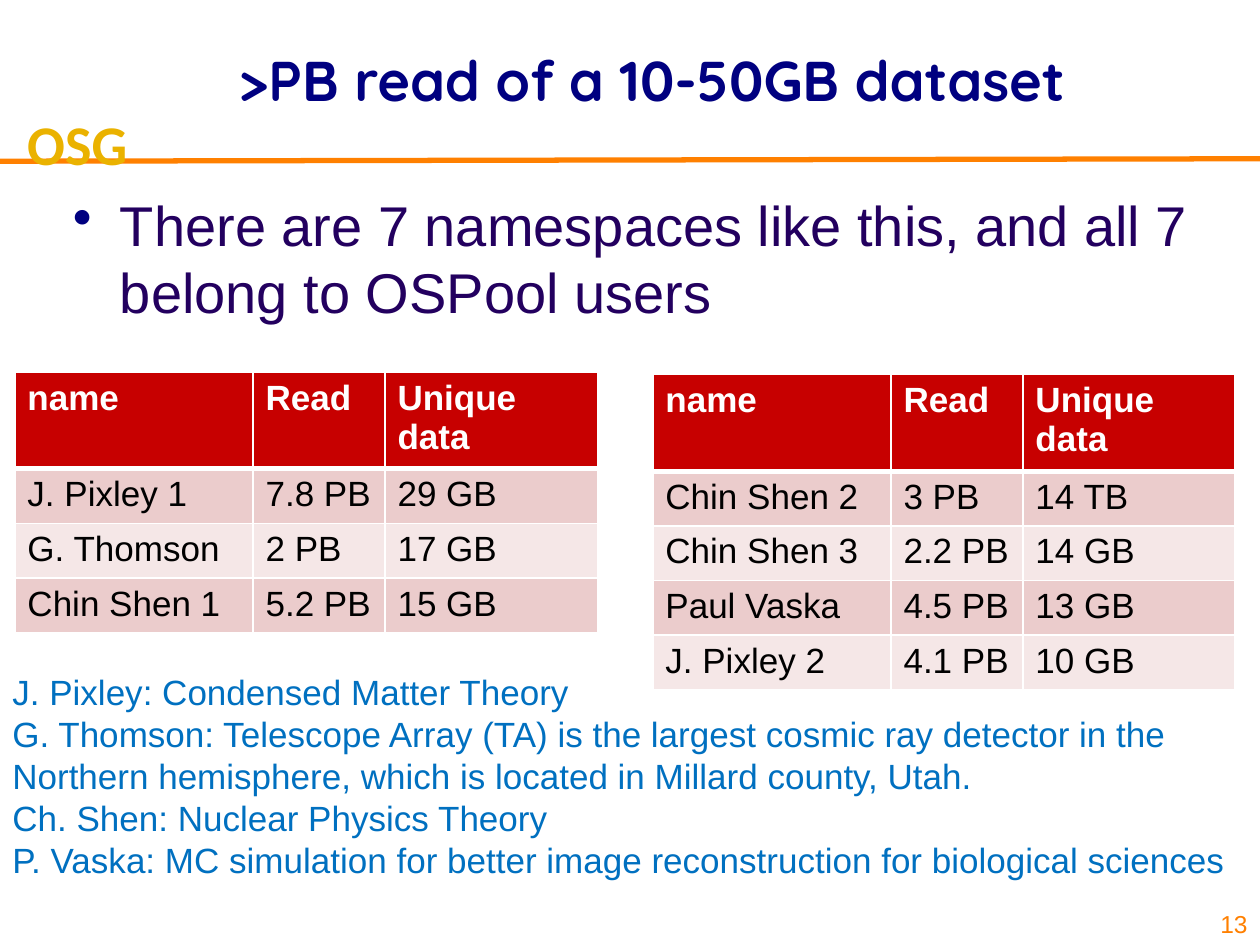
from lxml import etree
from pptx import Presentation
from pptx.dml.color import RGBColor
from pptx.enum.shapes import MSO_CONNECTOR
from pptx.enum.text import MSO_ANCHOR, PP_ALIGN
from pptx.oxml.ns import qn
from pptx.util import Cm, Pt

STRAIGHT = MSO_CONNECTOR.STRAIGHT
TOP, MIDDLE, BOTTOM = MSO_ANCHOR.TOP, MSO_ANCHOR.MIDDLE, MSO_ANCHOR.BOTTOM
LEFT, CENTER, RIGHT = PP_ALIGN.LEFT, PP_ALIGN.CENTER, PP_ALIGN.RIGHT

COLORS = {
    "orange": "FF8000", "gold": "EAB200", "navy": "000080", "purple": "23005F",
    "blue": "0070C0", "red": "C70000", "pink": "EBCCCC", "pale": "F5E7E7",
    "white": "FFFFFF", "black": "000000",
}
HEADER = ("name", "Read", "Unique data")
LEFT_ROWS = [
    ("J. Pixley 1", "7.8 PB", "29 GB"),
    ("G. Thomson", "2 PB", "17 GB"),
    ("Chin Shen 1", "5.2 PB", "15 GB"),
]
RIGHT_ROWS = [
    ("Chin Shen 2", "3 PB", "14 TB"),
    ("Chin Shen 3", "2.2 PB", "14 GB"),
    ("Paul Vaska", "4.5 PB", "13 GB"),
    ("J. Pixley 2", "4.1 PB", "10 GB"),
]
COLUMN_WIDTHS = (4.8, 2.66, 4.28)
ROW_HEIGHT = 1.03
FIELDS = [
    "J. Pixley: Condensed Matter Theory",
    "G. Thomson: Telescope Array (TA) is the largest cosmic ray detector in the",
    "Northern hemisphere, which is located in Millard county, Utah.",
    "Ch. Shen: Nuclear Physics Theory",
    "P. Vaska: MC simulation for better image reconstruction for biological sciences",
]


def rgb(name):
    """Return the named colour."""
    return RGBColor.from_string(COLORS[name])


def style(p, size, color, name="Arial", bold=False, align=LEFT):
    """Set the font and alignment of a paragraph."""
    p.alignment = align
    font = p.font
    font.name, font.size, font.bold = name, Pt(size), bold
    font.color.rgb = rgb(color)


def add_text(s, box, lines, size, color, anchor=TOP, wrap=True, **kwargs):
    """Add a text box with one paragraph per line and return its frame."""
    tf = s.shapes.add_textbox(*map(Cm, box)).text_frame
    tf.word_wrap = wrap
    tf.vertical_anchor = anchor
    tf.text = "\n".join(lines)
    for p in tf.paragraphs:
        style(p, size, color, **kwargs)
    return tf


def add_title(s, box, text):
    """Place and format the title placeholder."""
    title = s.shapes.title
    title.left, title.top, title.width, title.height = map(Cm, box)
    tf = title.text_frame
    tf.text = text
    tf.vertical_anchor = MIDDLE
    style(tf.paragraphs[0], 32, "navy", name="Quicksand", bold=True, align=CENTER)


def add_banner(s, box):
    """Add the rule under the title and the group label on it."""
    x, y, w, h = box
    rule = s.shapes.add_connector(
        STRAIGHT, Cm(x), Cm(y + 1.17), Cm(x + w), Cm(y + 1.12))
    rule.line.color.rgb = rgb("orange")
    rule.line.width = Pt(3)
    etree.SubElement(rule._element.spPr, qn("a:effectLst"))
    add_text(s, (x + 0.3, y, 2.87, h), ["OSG"], 32, "gold", wrap=False,
             name="Calibri", bold=True)


def add_bullet(s, box, text):
    """Add the bulleted statement."""
    p = add_text(s, box, [text], 32, "purple").paragraphs[0]
    pPr = p._p.get_or_add_pPr()
    pPr.set("marL", str(Cm(0.95)))
    pPr.set("indent", str(-Cm(0.95)))
    bullet_color = etree.Element(qn("a:buClr"))
    etree.SubElement(bullet_color, qn("a:srgbClr"), val=COLORS["navy"])
    bullet = etree.Element(qn("a:buChar"), char="•")
    pPr.insert(0, bullet_color)
    pPr.insert(1, bullet)


def set_borders(cell, top, bottom):
    """Give a cell white borders, with its top and bottom widths in points."""
    tcPr = cell._tc.get_or_add_tcPr()
    for side, width in (("L", 1), ("R", 1), ("T", top), ("B", bottom)):
        ln = etree.SubElement(tcPr, qn(f"a:ln{side}"), w=str(Pt(width)))
        fill = etree.SubElement(ln, qn("a:solidFill"))
        etree.SubElement(fill, qn("a:srgbClr"), val=COLORS["white"])


def add_usage_table(s, x, y, rows):
    """Add a table of read volumes with its corner at x, y."""
    rows = [HEADER, *rows]
    table = s.shapes.add_table(
        len(rows), len(HEADER), Cm(x), Cm(y), Cm(sum(COLUMN_WIDTHS)),
        Cm(ROW_HEIGHT * len(rows))).table
    for column, width in zip(table.columns, COLUMN_WIDTHS):
        column.width = Cm(width)
    for i, values in enumerate(rows):
        table.rows[i].height = Cm(ROW_HEIGHT)
        header = i == 0
        fill = "red" if header else ("pale", "pink")[i % 2]
        for j, value in enumerate(values):
            cell = table.cell(i, j)
            set_borders(cell, 3 if i == 1 else 1, 3 if header else 1)
            cell.fill.solid()
            cell.fill.fore_color.rgb = rgb(fill)
            cell.text = value
            style(cell.text_frame.paragraphs[0], 20,
                  "white" if header else "black", bold=header)


def main():
    """Build and save the slide."""
    prs = Presentation()
    prs.slide_width, prs.slide_height = Cm(25.4), Cm(19.05)
    s = prs.slides.add_slide(prs.slide_layouts[5])
    add_title(s, (3.5, 0, 19.3, 3.18), ">PB read of a 10-50GB dataset")
    add_banner(s, (0, 2.08, 25.4, 1.63))
    add_bullet(s, (1.22, 3.71, 23.44, 3.18),
               "There are 7 namespaces like this, and all 7 belong to OSPool users")
    add_usage_table(s, 0.3, 7.5, LEFT_ROWS)
    add_usage_table(s, 13.16, 7.55, RIGHT_ROWS)
    add_text(s, (0, 13.39, 25.63, 4.52), FIELDS, 20, "blue", wrap=False)
    add_text(s, (24.23, 17.78, 1.17, 1.27), ["13"], 14, "orange",
             anchor=BOTTOM, align=RIGHT)
    prs.save("out.pptx")


if __name__ == "__main__":
    main()
